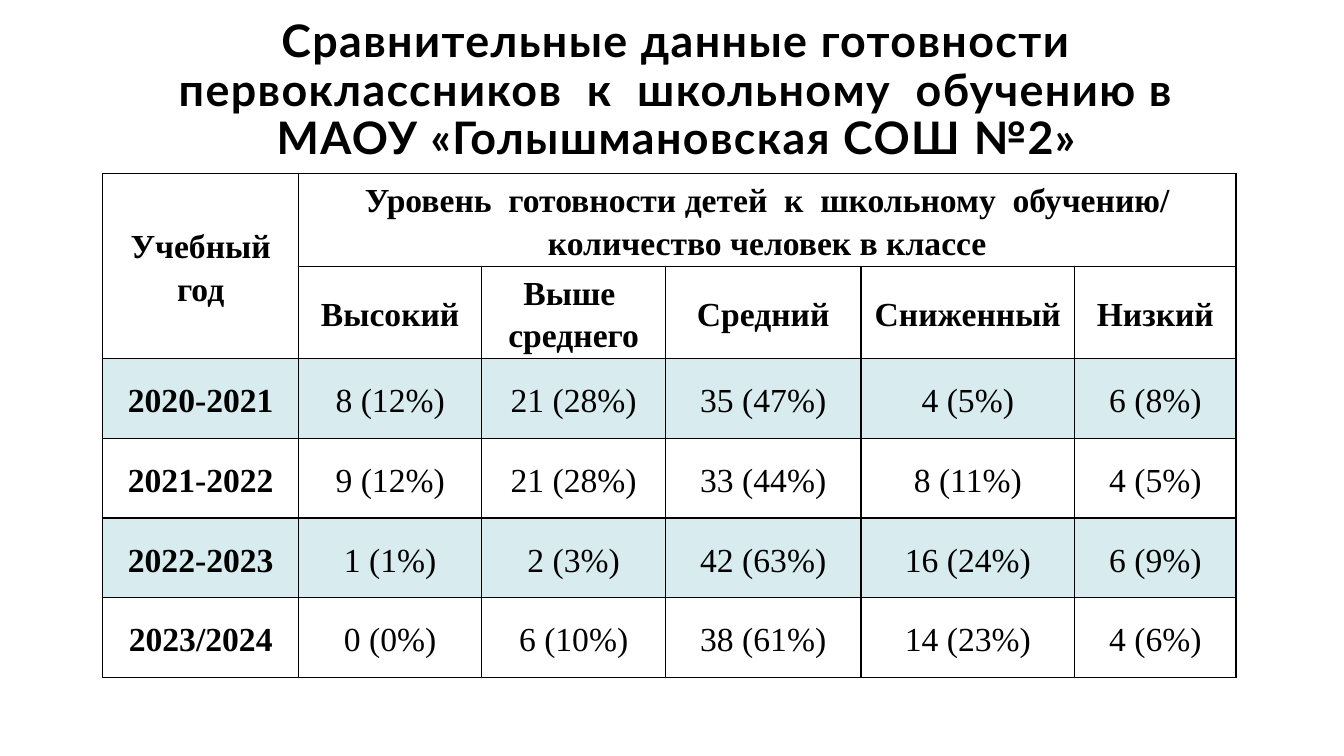
from lxml.etree import SubElement
from pptx import Presentation
from pptx.dml.color import RGBColor
from pptx.enum.text import MSO_ANCHOR as Anchor, PP_ALIGN as Align
from pptx.oxml.ns import qn
from pptx.util import Inches, Pt

BLACK = RGBColor(0, 0, 0)
TINT = RGBColor(0xD8, 0xEB, 0xEE)
COLS = [1.94, 1.82, 1.82, 1.94, 2.12, 1.6]
ROWS = [0.89] * 2 + [0.79] * 4
TITLE = ("Сравнительные данные готовности первоклассников  к  школьному  "
         "обучению в МАОУ «Голышмановская СОШ №2»")
LEVEL = ("Уровень  готовности детей  к  школьному  обучению/\n"
         "количество человек в классе")
DATA = [
    ["Учебный год", LEVEL, "", "", "", ""],
    ["", "Высокий", "Выше  среднего", "Средний", "Сниженный", "Низкий"],
    ["2020-2021", "8 (12%)", "21 (28%)", "35 (47%)", "4 (5%)", "6 (8%)"],
    ["2021-2022", "9 (12%)", "21 (28%)", "33 (44%)", "8 (11%)", "4 (5%)"],
    ["2022-2023", "1 (1%)", "2 (3%)", "42 (63%)", "16 (24%)", "6 (9%)"],
    ["2023/2024", "0 (0%)", "6 (10%)", "38 (61%)", "14 (23%)", "4 (6%)"],
]


def style(frame, face, size, bold, space):
    for para in frame.paragraphs:
        para.alignment = Align.CENTER
        para.line_spacing = space
        font = para.font
        font.name, font.size, font.bold = face, Pt(size), bold
        font.color.rgb = BLACK


def add_title(slide):
    box = slide.shapes.add_textbox(
        Inches(1.05), Inches(0.22), Inches(11.32), Inches(1.41))
    frame = box.text_frame
    frame.word_wrap = True
    frame.vertical_anchor = Anchor.BOTTOM
    frame.margin_left = frame.margin_right = 0
    frame.margin_top = frame.margin_bottom = 0
    frame.text = TITLE
    style(frame, "Lato", 32, True, 0.9)
    frame.paragraphs[0].runs[0].font._element.set("spc", "100")


def add_edges(cell):
    props = cell._tc.get_or_add_tcPr()
    for side in ("lnL", "lnR", "lnT", "lnB"):
        line = SubElement(props, qn(f"a:{side}"), w=str(Pt(1)))
        fill = SubElement(line, qn("a:solidFill"))
        SubElement(fill, qn("a:srgbClr"), val=str(BLACK))


def fill_cell(cell, text, bold, tint):
    cell.text = text
    cell.vertical_anchor = Anchor.MIDDLE
    cell.margin_left = cell.margin_right = Inches(0.07)
    cell.margin_top = cell.margin_bottom = 0
    style(cell.text_frame, "Times New Roman", 24, bold, 1.15)
    add_edges(cell)
    if tint:
        cell.fill.solid()
        cell.fill.fore_color.rgb = TINT
    else:
        cell.fill.background()


def add_grid(slide):
    table = slide.shapes.add_table(
        len(ROWS), len(COLS), Inches(1.02), Inches(1.72),
        Inches(sum(COLS)), Inches(sum(ROWS))).table
    for col, width in zip(table.columns, COLS):
        col.width = Inches(width)
    for row, height in zip(table.rows, ROWS):
        row.height = Inches(height)
    for r, line in enumerate(DATA):
        for c, text in enumerate(line):
            fill_cell(table.cell(r, c), text, r < 2 or c == 0,
                      r >= 2 and r % 2 == 0)
    table.cell(0, 0).merge(table.cell(1, 0))
    table.cell(0, 1).merge(table.cell(0, 5))


def main():
    deck = Presentation()
    deck.slide_width, deck.slide_height = Inches(13.33), Inches(7.5)
    slide = deck.slides.add_slide(deck.slide_layouts[6])
    add_title(slide)
    add_grid(slide)
    deck.save("out.pptx")


if __name__ == "__main__":
    main()
